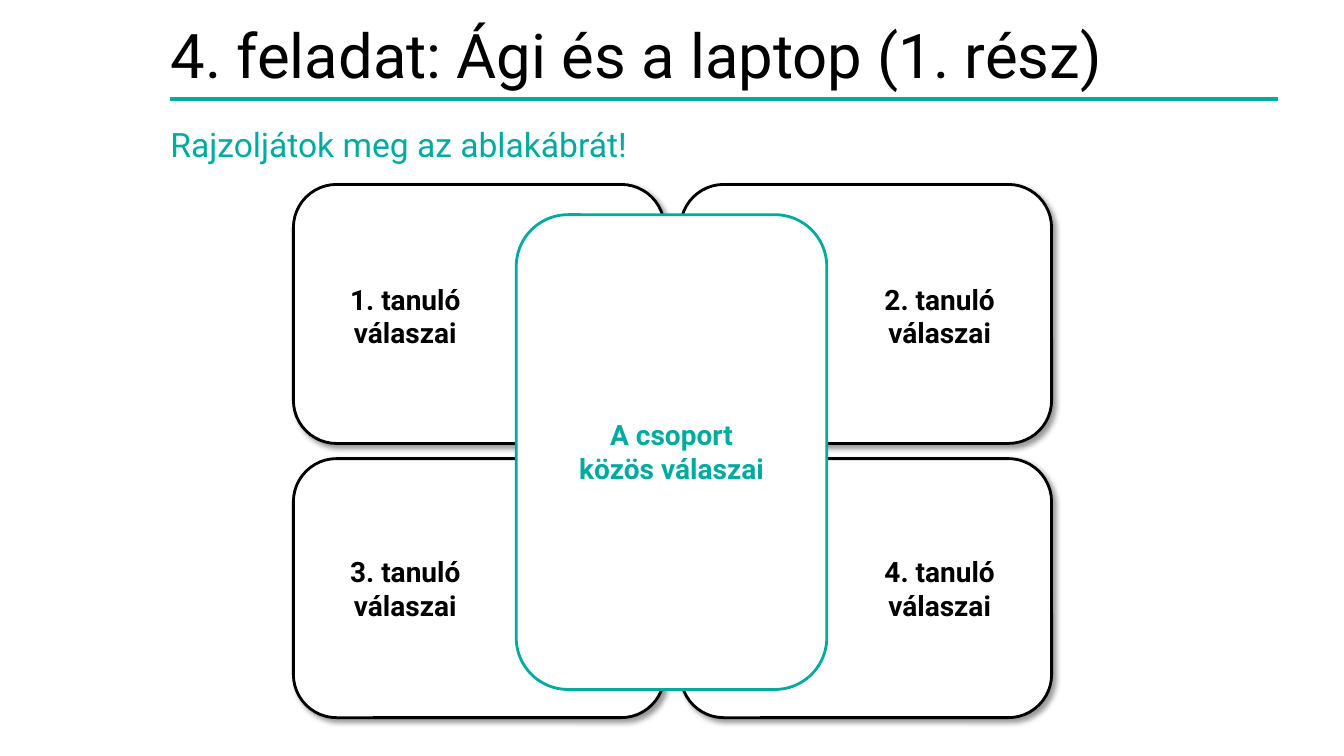
from lxml import etree
from pptx import Presentation
from pptx.dml.color import RGBColor
from pptx.enum.shapes import MSO_CONNECTOR, MSO_SHAPE
from pptx.enum.text import MSO_ANCHOR, PP_ALIGN
from pptx.oxml import parse_xml
from pptx.oxml.ns import nsdecls, qn
from pptx.util import Pt

EMU_PER_PX = 9144
ROUNDED = MSO_SHAPE.ROUNDED_RECTANGLE
STRAIGHT = MSO_CONNECTOR.STRAIGHT
TOP, MIDDLE = MSO_ANCHOR.TOP, MSO_ANCHOR.MIDDLE
LEFT, CENTER = PP_ALIGN.LEFT, PP_ALIGN.CENTER
COLORS = {"teal": "00AA9F", "black": "000000", "white": "FFFFFF"}
FONT = "Roboto"
SHADOW = (
    f'<a:effectLst {nsdecls("a")}>'
    '<a:outerShdw blurRad="50800" dist="38100" dir="2700000" algn="tl" rotWithShape="0">'
    f'<a:srgbClr val="{COLORS["black"]}"><a:alpha val="40000"/></a:srgbClr>'
    '</a:outerShdw></a:effectLst>'
)


def px(value):
    return value * EMU_PER_PX


def color(name):
    return RGBColor.from_string(COLORS[name])


class WindowSlide:
    """Draws styled lines, panels and text on the current slide."""

    def __init__(self, slide):
        self.slide = slide

    def rule(self, left, right, y):
        line = self.slide.shapes.add_connector(STRAIGHT, px(left), px(y), px(right), px(y))
        line.line.color.rgb = color("teal")
        line.line.width = Pt(3)
        etree.SubElement(line._element.spPr, qn("a:effectLst"))

    def panel(self, left, top, width, height, outline, shadow=False):
        shape = self.slide.shapes.add_shape(ROUNDED, px(left), px(top), px(width), px(height))
        shape.shadow.inherit = False
        shape.fill.solid()
        shape.fill.fore_color.rgb = color("white")
        shape.line.color.rgb = color(outline)
        shape.line.width = Pt(2)
        if shadow:
            properties = shape._element.spPr
            properties.replace(properties.find(qn("a:effectLst")), parse_xml(SHADOW))

    def text(self, text, left, top, width, height, size=20, ink="black", bold=False,
             align=LEFT, anchor=TOP, inset=0, spacing=1.0):
        box = self.slide.shapes.add_textbox(px(left), px(top), px(width), px(height))
        frame = box.text_frame
        frame.word_wrap = True
        frame.vertical_anchor = anchor
        frame.margin_left = frame.margin_right = px(inset)
        frame.margin_top = frame.margin_bottom = px(inset)
        paragraph = frame.paragraphs[0]
        paragraph.text = text
        paragraph.alignment = align
        paragraph.line_spacing = spacing
        for run in paragraph.runs:
            run.font.name = FONT
            run.font.size = Pt(size)
            run.font.bold = bold
            run.font.color.rgb = color(ink)

    def label(self, text, left, top, width, ink="black"):
        self.text(text, left, top, width, 63, ink=ink, bold=True,
                  align=CENTER, anchor=MIDDLE, inset=4)


def main():
    presentation = Presentation()
    presentation.slide_width, presentation.slide_height = px(1333), px(750)
    window = WindowSlide(presentation.slides.add_slide(presentation.slide_layouts[6]))

    window.rule(169, 1268, 98)
    window.text("4. feladat: Ági és a laptop (1. rész)", 169, 33, 1098, 51,
                size=44, anchor=MIDDLE, spacing=0.9)
    window.text("Rajzoljátok meg az ablakábrát!", 169, 127, 1098, 39,
                size=24, ink="teal", spacing=0.9)

    for top in (183, 455):
        for left in (675, 291):
            window.panel(left, top, 368, 257, "black", shadow=True)
    window.panel(512, 213, 308, 471, "teal")

    window.label("A csoport\vközös válaszai", 512, 416, 308, ink="teal")
    for index in range(4):
        row, column = divmod(index, 2)
        window.label(f"{index + 1}. tanuló\vválaszai", 291 + 530 * column, 282 + 270 * row, 222)

    presentation.save("out.pptx")


if __name__ == "__main__":
    main()
